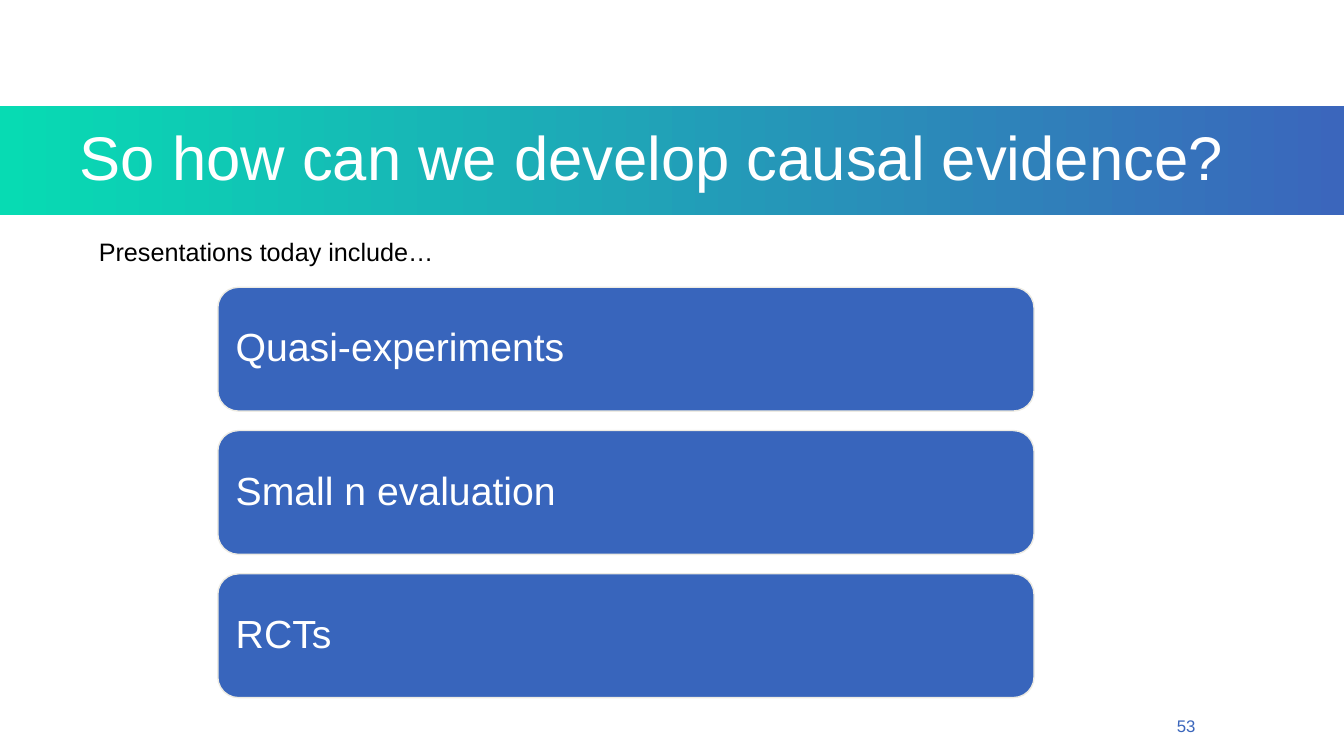
from pptx import Presentation
from pptx import util as u
from pptx.dml.color import RGBColor
from pptx.enum import shapes, text

TITLE = "So how can we develop causal evidence?"
INTRO = "Presentations today include…"
METHODS = ["Quasi-experiments", "Small n evaluation", "RCTs"]
PAGE_NUMBER = "53"

TEAL = RGBColor(0x07, 0xDB, 0xB3)
BLUE = RGBColor(0x3B, 0x66, 0xBC)
BOX_BLUE = RGBColor(0x38, 0x65, 0xBC)
BOX_EDGE = RGBColor(0xED, 0xEB, 0xE3)
WHITE = RGBColor(0xFF, 0xFF, 0xFF)
BLACK = RGBColor(0, 0, 0)

SLIDE_WIDTH, SLIDE_HEIGHT = u.Cm(33.87), u.Cm(19.05)
BOX_LEFT, BOX_TOP, BOX_WIDTH, BOX_HEIGHT = 5.49, 7.24, 20.57, 3.12
BOX_PITCH = 3.61
BOX_INSET = u.Cm(0.3)


def write(shape, words, size, color, align=text.PP_ALIGN.LEFT, spacing=0.9, **frame_format):
    """Put one formatted paragraph in the shape; frame_format sets its text frame."""
    frame = shape.text_frame
    settings = {"word_wrap": True, "auto_size": text.MSO_AUTO_SIZE.NONE, **frame_format}
    for name, value in settings.items():
        setattr(frame, name, value)
    paragraph = frame.paragraphs[0]
    paragraph.text = words
    paragraph.alignment = align
    paragraph.line_spacing = spacing
    font = paragraph.runs[0].font
    for name, value in {"name": "Arial", "size": u.Pt(size)}.items():
        setattr(font, name, value)
    font.color.rgb = color


def add_title(slide):
    title = slide.shapes.title
    place = {"left": 0, "top": u.Cm(2.67), "width": SLIDE_WIDTH, "height": u.Cm(2.74)}
    for name, value in place.items():
        setattr(title, name, value)
    title.fill.gradient()
    title.fill.gradient_angle = 0
    for stop, position, color in zip(title.fill.gradient_stops, (0, 1), (TEAL, BLUE)):
        stop.position = position
        stop.color.rgb = color
    write(title, TITLE, 44, WHITE, margin_left=u.Cm(2.01),
          vertical_anchor=text.MSO_ANCHOR.MIDDLE)


def add_method(slide, row, method):
    box = slide.shapes.add_shape(
        shapes.MSO_SHAPE.ROUNDED_RECTANGLE, u.Cm(BOX_LEFT),
        u.Cm(BOX_TOP + row * BOX_PITCH), u.Cm(BOX_WIDTH), u.Cm(BOX_HEIGHT))
    box.shadow.inherit = False
    box.fill.solid()
    box.fill.fore_color.rgb = BOX_BLUE
    box.line.color.rgb = BOX_EDGE
    box.line.width = u.Pt(1)
    write(box, method, 28, WHITE, vertical_anchor=text.MSO_ANCHOR.MIDDLE,
          margin_left=BOX_INSET, margin_right=BOX_INSET,
          margin_top=BOX_INSET, margin_bottom=BOX_INSET)


def main():
    presentation = Presentation()
    presentation.slide_width, presentation.slide_height = SLIDE_WIDTH, SLIDE_HEIGHT
    slide = presentation.slides.add_slide(presentation.slide_layouts.get_by_name("Title Only"))

    add_title(slide)
    for row, method in enumerate(METHODS):
        add_method(slide, row, method)

    intro = slide.shapes.add_textbox(u.Cm(2.24), u.Cm(5.92), u.Cm(16.94), u.Cm(0.94))
    write(intro, INTRO, 18, BLACK, auto_size=text.MSO_AUTO_SIZE.SHAPE_TO_FIT_TEXT)
    number = slide.shapes.add_textbox(u.Cm(22.76), u.Cm(18.03), u.Cm(7.62), u.Cm(0.64))
    write(number, PAGE_NUMBER, 12, BLUE, text.PP_ALIGN.RIGHT, 1.0,
          vertical_anchor=text.MSO_ANCHOR.BOTTOM)

    presentation.save("out.pptx")


if __name__ == "__main__":
    main()
